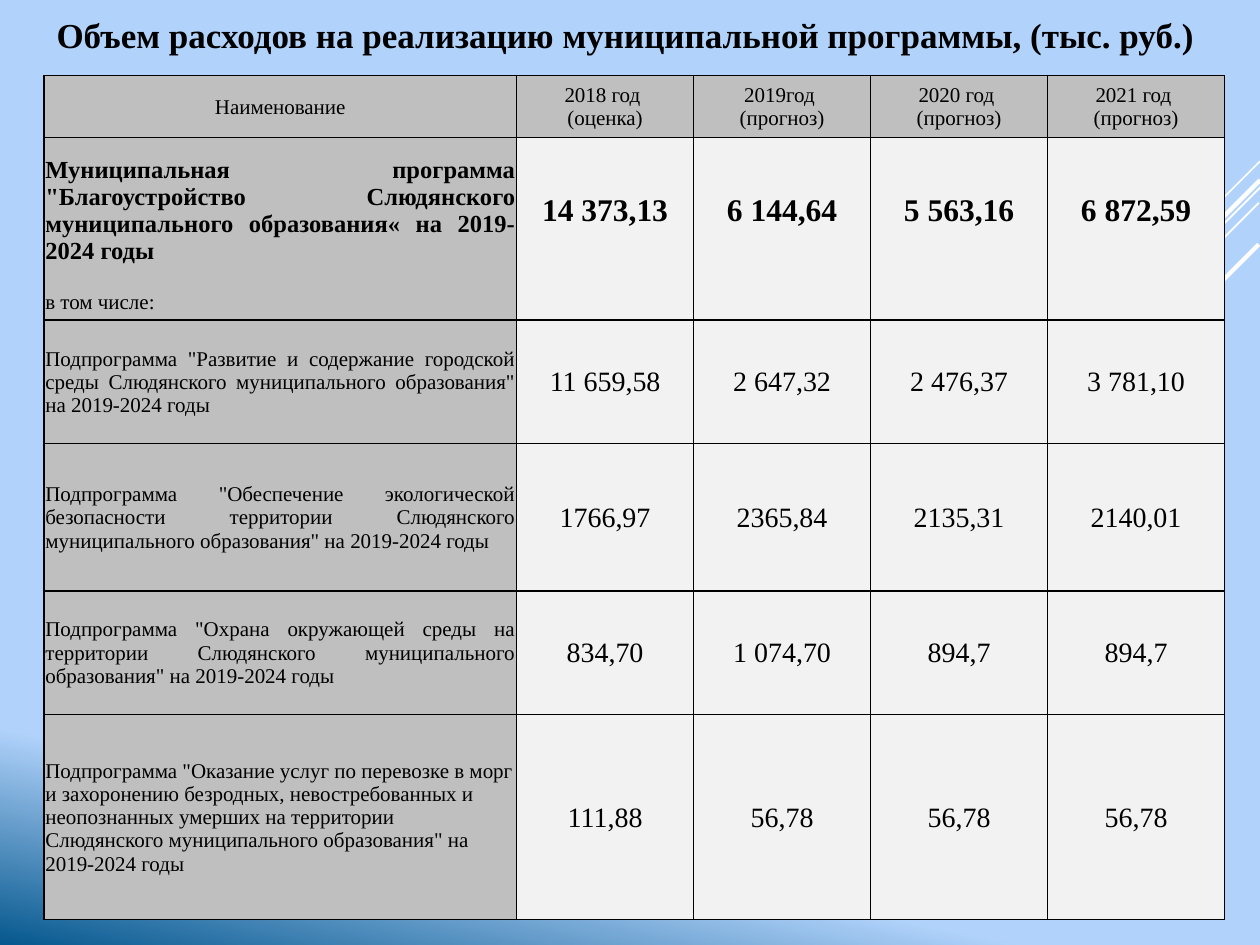
from dataclasses import dataclass

from lxml.etree import SubElement
from pptx import Presentation
from pptx.dml.color import RGBColor
from pptx.enum.shapes import MSO_CONNECTOR as CONNECTOR
from pptx.enum.text import MSO_ANCHOR as ANCHOR, MSO_AUTO_SIZE as AUTO_SIZE, PP_ALIGN as ALIGN
from pptx.oxml.ns import qn
from pptx.util import Inches, Pt


@dataclass(frozen=True)
class Theme:
    font: str = "Times New Roman"
    sky: str = "B1D3FB"
    deep_blue: str = "06588E"
    ray: str = "FFFFFF"
    ink: str = "000000"
    label_fill: str = "BFBFBF"
    value_fill: str = "F2F2F2"
    title_size: int = 20
    total_size: int = 18
    value_size: int = 16
    program_size: int = 14
    label_size: int = 12


THEME = Theme()

TITLE = "Объем расходов на реализацию муниципальной программы, (тыс. руб.)"

# start x, start y, end x, end y, width in points
RAYS = [
    (10, 1.28, 6.57, 4.71, 1),
    (10.01, 1.48, 4.74, 6.74, 1),
    (9.99, 1.61, 5.71, 5.89, 1),
    (10, 1.43, 5.8, 5.63, 2.5),
    (9.99, 1.94, 6.24, 5.69, 2.5),
]

HEADER = ["Наименование", "2018 год \n(оценка)", "2019год \n(прогноз)",
          "2020 год \n(прогноз)", "2021 год \n(прогноз)"]
PROGRAM = ['Муниципальная программа "Благоустройство Слюдянского '
           'муниципального образования« на 2019-2024 годы',
           "14 373,13", "6 144,64", "5 563,16", "6 872,59"]
INCLUDING = ["в том числе:", "", "", "", ""]
SUBPROGRAMS = [
    ['Подпрограмма "Развитие и содержание городской среды Слюдянского '
     'муниципального образования" на 2019-2024 годы',
     "11 659,58", "2 647,32", "2 476,37", "3 781,10"],
    ['Подпрограмма "Обеспечение экологической безопасности территории '
     'Слюдянского муниципального образования" на 2019-2024 годы',
     "1766,97", "2365,84", "2135,31", "2140,01"],
    ['Подпрограмма "Охрана окружающей среды на территории Слюдянского '
     'муниципального образования" на 2019-2024 годы',
     "834,70", "1 074,70", "894,7", "894,7"],
    ['Подпрограмма "Оказание услуг по перевозке в морг и захоронению безродных, '
     'невостребованных и неопознанных умерших на территории Слюдянского '
     'муниципального образования" на 2019-2024 годы',
     "111,88", "56,78", "56,78", "56,78"],
]
ROW_HEIGHTS = [0.49, 1.16, 0.29, 0.98, 1.17, 0.98, 1.63]
TABLE_WIDTH, NAME_WIDTH = 9.37, 3.75


def rgb(value):
    return RGBColor.from_string(value)


def paint_background(slide):
    fill = slide.background.fill
    fill.gradient()
    fill.gradient_angle = 360 - 102
    stops = ((0.82, THEME.sky), (1, THEME.deep_blue))
    for stop, (position, color) in zip(fill.gradient_stops, stops):
        stop.position = position
        stop.color.rgb = rgb(color)


def add_ray(slide, x1, y1, x2, y2, width):
    ray = slide.shapes.add_connector(
        CONNECTOR.STRAIGHT, Inches(x1), Inches(y1), Inches(x2), Inches(y2))
    ray.line.color.rgb = rgb(THEME.ray)
    ray.line.width = Pt(width)
    SubElement(ray._element.spPr, qn("a:effectLst"))


def write(frame, text, size, align, bold=False):
    frame.text = text
    font_format = {"name": THEME.font, "size": Pt(size), "bold": bold}
    for paragraph in frame.paragraphs:
        paragraph.alignment = align
        for run in paragraph.runs:
            for name, value in font_format.items():
                setattr(run.font, name, value)
            run.font.color.rgb = rgb(THEME.ink)
        # Keeps the height of empty cells small
        paragraph._p.get_or_add_endParaRPr().set("sz", str(size * 100))


def add_title(slide):
    box = slide.shapes.add_textbox(Inches(0.2), Inches(0.06), Inches(9.53), Inches(0.44))
    box.text_frame.word_wrap = True
    box.text_frame.auto_size = AUTO_SIZE.SHAPE_TO_FIT_TEXT
    write(box.text_frame, TITLE, THEME.title_size, ALIGN.CENTER, bold=True)


def set_borders(cell, hidden):
    properties = cell._tc.get_or_add_tcPr()
    for position, side in enumerate(("L", "R", "T", "B")):
        border = SubElement(properties, qn(f"a:ln{side}"), w=str(Pt(1)))
        properties.insert(position, border)  # borders come before the fill
        if side == hidden:
            SubElement(border, qn("a:noFill"))
        else:
            solid = SubElement(border, qn("a:solidFill"))
            SubElement(solid, qn("a:srgbClr"), val=THEME.ink)


def fill_row(table, row, texts, label_size, value_size, label_align,
             bold=False, value_fill=THEME.value_fill, hidden=None):
    cell_format = {"margin_left": Inches(0.01), "margin_right": Inches(0.01),
                   "margin_top": Inches(0.01), "margin_bottom": 0,
                   "vertical_anchor": ANCHOR.MIDDLE}
    for column, text in enumerate(texts):
        cell = table.cell(row, column)
        is_label = column == 0
        for name, value in cell_format.items():
            setattr(cell, name, value)
        cell.fill.solid()
        cell.fill.fore_color.rgb = rgb(THEME.label_fill if is_label else value_fill)
        write(cell.text_frame, text, label_size if is_label else value_size,
              label_align if is_label else ALIGN.CENTER, bold)
        set_borders(cell, hidden)


def add_expense_table(slide):
    table = slide.shapes.add_table(
        len(ROW_HEIGHTS), len(HEADER), Inches(0.35), Inches(0.6),
        Inches(TABLE_WIDTH), Inches(sum(ROW_HEIGHTS))).table
    table.first_row = table.horz_banding = False
    year_width = (TABLE_WIDTH - NAME_WIDTH) / (len(HEADER) - 1)
    for index, column in enumerate(table.columns):
        column.width = Inches(year_width if index else NAME_WIDTH)
    for row, height in zip(table.rows, ROW_HEIGHTS):
        row.height = Inches(height)

    # Header, then the program total that shares one frame with "в том числе"
    small = THEME.label_size
    fill_row(table, 0, HEADER, small, small, ALIGN.CENTER, value_fill=THEME.label_fill)
    fill_row(table, 1, PROGRAM, THEME.program_size, THEME.total_size, ALIGN.JUSTIFY,
             bold=True, hidden="B")
    fill_row(table, 2, INCLUDING, small, small, ALIGN.JUSTIFY, hidden="T")

    # Subprograms: the last name is set flush left
    for row, texts in enumerate(SUBPROGRAMS, start=3):
        align = ALIGN.LEFT if texts is SUBPROGRAMS[-1] else ALIGN.JUSTIFY
        fill_row(table, row, texts, small, THEME.value_size, align)


def main():
    deck = Presentation()
    deck.slide_width, deck.slide_height = Inches(10), Inches(7.5)
    slide = deck.slides.add_slide(deck.slide_layouts[6])
    paint_background(slide)
    for ray in RAYS:
        add_ray(slide, *ray)
    add_title(slide)
    add_expense_table(slide)
    deck.save("out.pptx")


if __name__ == "__main__":
    main()
